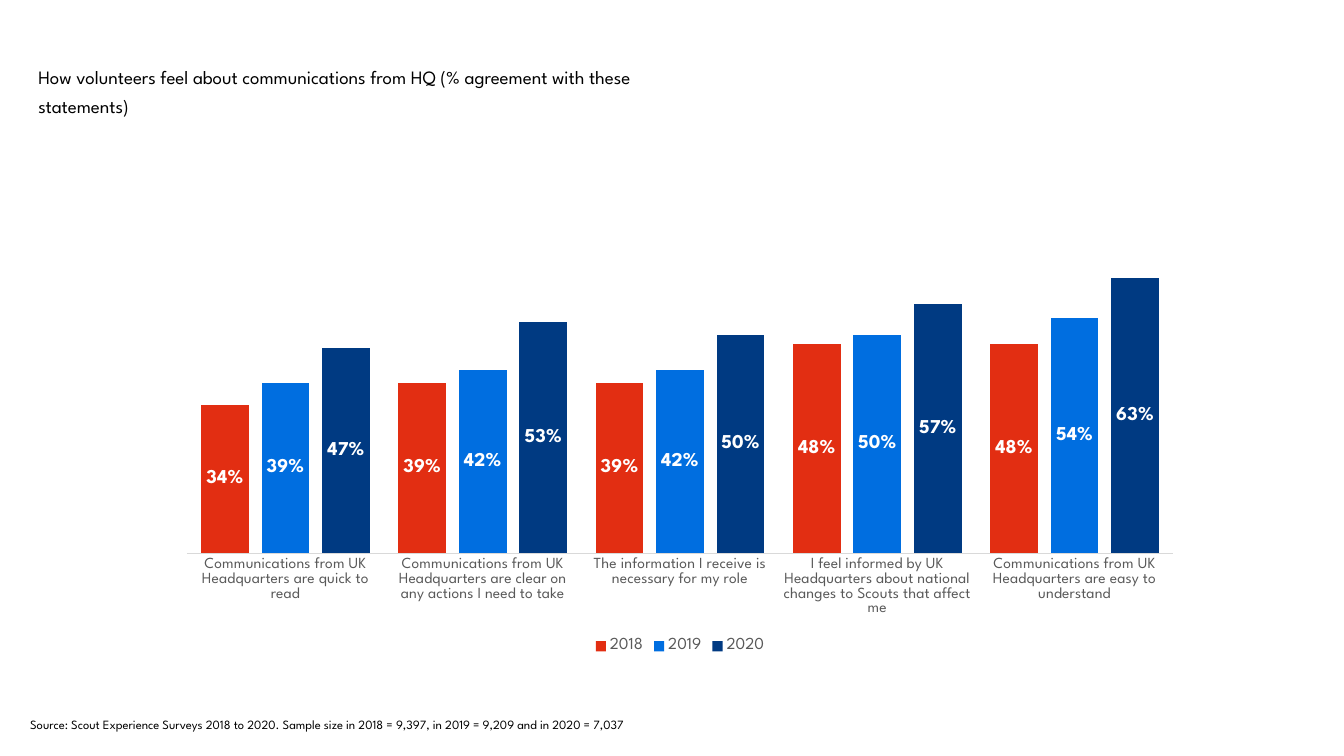
from pptx import Presentation
from pptx import util as u
from pptx.chart.data import CategoryChartData
from pptx.dml.color import RGBColor
from pptx.enum import chart as ch, text
from pptx.oxml import parse_xml
from pptx.oxml.ns import nsdecls

BLACK = RGBColor(0x00, 0x00, 0x00)
WHITE = RGBColor(0xFF, 0xFF, 0xFF)
GREY = RGBColor(0x59, 0x59, 0x59)
LINE = RGBColor(0xD9, 0xD9, 0xD9)
RED = RGBColor(0xE2, 0x2E, 0x12)
BLUE = RGBColor(0x00, 0x6E, 0xE0)
NAVY = RGBColor(0x00, 0x3A, 0x82)

TOPICS = [
    "Communications from UK Headquarters are quick to read",
    "Communications from UK Headquarters are clear on any actions I need to take",
    "The information I receive is necessary for my role",
    "I feel informed by UK Headquarters about national changes to Scouts that affect me",
    "Communications from UK Headquarters are easy to understand",
]
YEARS = [
    ("2018", RED, (0.34, 0.39, 0.39, 0.48, 0.48)),
    ("2019", BLUE, (0.39, 0.42, 0.42, 0.5, 0.54)),
    ("2020", NAVY, (0.47, 0.53, 0.5, 0.57, 0.63)),
]


class Deck:
    """Holds the style and the current slide, and adds elements to it."""

    face = "League Spartan"

    def __init__(self):
        self.prs = Presentation()
        self.prs.slide_width = u.Inches(13.33)
        self.prs.slide_height = u.Inches(7.5)
        self.slide = self.prs.slides.add_slide(self.prs.slide_layouts[5])

    def style(self, font, size, color, bold=False):
        font.name = self.face
        font.size = u.Pt(size)
        font.bold = bold
        font.color.rgb = color

    def fill(self, frame, words, size):
        frame.word_wrap = True
        frame.auto_size = text.MSO_AUTO_SIZE.NONE
        frame.vertical_anchor = text.MSO_ANCHOR.TOP
        para = frame.paragraphs[0]
        para.alignment = text.PP_ALIGN.LEFT
        run = para.add_run()
        run.text = words
        self.style(run.font, size, BLACK)
        return para

    def title(self, words, box, size):
        shape = self.slide.shapes.title
        shape.left, shape.top, shape.width, shape.height = map(u.Inches, box)
        frame = shape.text_frame
        frame.margin_left = frame.margin_right = 0
        frame.margin_top = frame.margin_bottom = 0
        self.fill(frame, words, size).line_spacing = 1.3

    def note(self, words, box, size):
        shape = self.slide.shapes.add_textbox(*map(u.Inches, box))
        self.fill(shape.text_frame, words, size)

    def columns(self, topics, years, box):
        data = CategoryChartData(number_format="0%")
        data.categories = topics
        for name, _, values in years:
            data.add_series(name, values)
        kind = ch.XL_CHART_TYPE.COLUMN_CLUSTERED
        frame = self.slide.shapes.add_chart(kind, *map(u.Inches, box), data)
        chart = frame.chart
        chart.has_title = False
        self.style(chart.font, 10, BLACK)
        self.axes(chart)
        self.legend(chart)
        plot = chart.plots[0]
        plot.gap_width = 60
        plot.overlap = -27
        plot.vary_by_categories = False
        for series, (_, color, _) in zip(plot.series, years):
            self.paint(series, color)
        self.place(chart, x=0.02, y=0.02, w=0.96, h=0.79)

    def axes(self, chart):
        axis = chart.category_axis
        axis.major_tick_mark = ch.XL_TICK_MARK.NONE
        axis.format.line.color.rgb = LINE
        axis.format.line.width = u.Pt(0.75)
        self.style(axis.tick_labels.font, 11, GREY)
        scale = chart.value_axis
        scale.minimum_scale = 0
        scale.maximum_scale = 1
        scale.has_major_gridlines = False
        scale.visible = False

    def legend(self, chart):
        chart.has_legend = True
        chart.legend.position = ch.XL_LEGEND_POSITION.BOTTOM
        chart.legend.include_in_layout = False
        self.style(chart.legend.font, 12, GREY)

    def paint(self, series, color):
        series.invert_if_negative = False
        series.format.fill.solid()
        series.format.fill.fore_color.rgb = color
        labels = series.data_labels
        labels.show_value = True
        labels.number_format = "0%"
        labels.number_format_is_linked = False
        labels.position = ch.XL_LABEL_POSITION.CENTER
        self.style(labels.font, 14, WHITE, bold=True)

    def place(self, chart, **parts):
        area = chart.plots[0]._element.getparent()
        for old in area.findall("{*}layout"):
            area.remove(old)
        modes = "".join(f'<c:{key}Mode val="edge"/>' for key in "xy")
        sizes = "".join(f'<c:{key} val="{val}"/>' for key, val in parts.items())
        area.insert(0, parse_xml(
            f'<c:layout {nsdecls("c")}><c:manualLayout>'
            f'<c:layoutTarget val="inner"/>{modes}{sizes}'
            '</c:manualLayout></c:layout>'))


def main():
    deck = Deck()
    deck.title("How volunteers feel about communications from HQ "
               "(% agreement with these statements)", (0.38, 0.58, 6.29, 0.45), 13.5)
    deck.columns(TOPICS, YEARS, (1.65, 1.05, 10.19, 5.48))
    deck.note("Source: Scout Experience Surveys 2018 to 2020. Sample size in "
              "2018 = 9,397, in 2019 = 9,209 and in 2020 = 7,037",
              (0.2, 7.06, 7.15, 0.25), 9)
    deck.prs.save("out.pptx")


if __name__ == "__main__":
    main()
